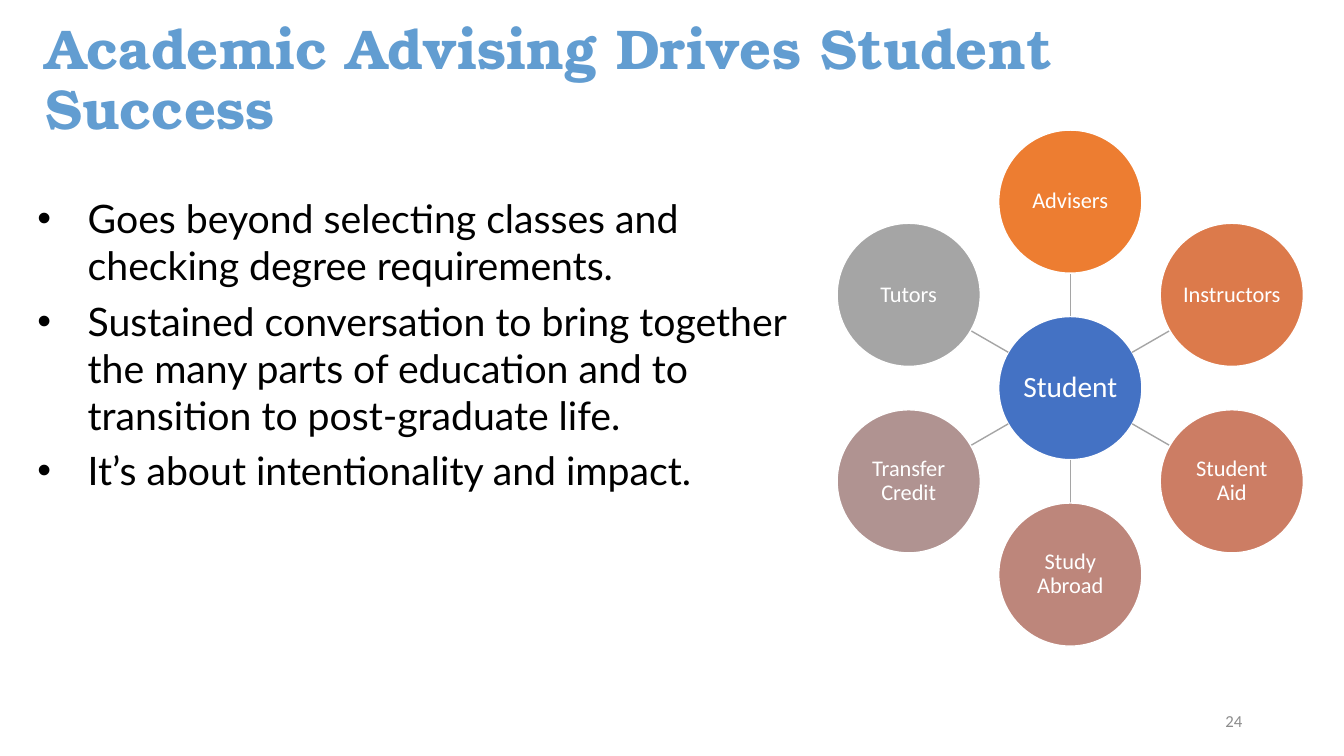
import math
from dataclasses import dataclass

import lxml.etree
import pptx
import pptx.dml.color
import pptx.enum.shapes
import pptx.enum.text
import pptx.oxml.ns
import pptx.util

ALIGN = pptx.enum.text.PP_ALIGN
ANCHOR = pptx.enum.text.MSO_ANCHOR
FIT = pptx.enum.text.MSO_AUTO_SIZE


@dataclass(frozen=True)
class Theme:
    title: str = "629DD1"
    body: str = "000000"
    white: str = "FFFFFF"
    hub: str = "4472C4"
    spoke: str = "A5A5A5"
    number: str = "8C8C8C"
    serif: str = "TeX Gyre Bonum"
    sans: str = "Lato"
    label: str = "Calibri"
    title_pt: int = 40
    body_pt: int = 28
    hub_pt: int = 21
    node_pt: int = 16
    number_pt: int = 12


THEME = Theme()
NODES = [
    ("Advisers", "ED7D31"),
    ("Instructors", "DC7A4B"),
    ("Student Aid", "CC7D64"),
    ("Study Abroad", "BD867B"),
    ("Transfer Credit", "B09391"),
    ("Tutors", "A5A5A5"),
]
POINTS = [
    "Goes beyond selecting classes and checking degree requirements.",
    "Sustained conversation to bring together the many parts of education and to transition to post-graduate life.",
    "It’s about intentionality and impact.",
]


def px(size):
    return pptx.util.Emu(round(size * 9144))


def tint(color):
    return pptx.dml.color.RGBColor.from_string(color)


def place(shape, box):
    shape.left, shape.top, shape.width, shape.height = map(px, box)


def write(shape, text, *, font, size, color, bold=False, align=ALIGN.LEFT,
          anchor=ANCHOR.MIDDLE, lead=1.0, before=0, inset=(10, 5), fit=FIT.NONE):
    frame = shape.text_frame
    frame.text = text
    frame.word_wrap = True
    frame.auto_size = fit
    frame.vertical_anchor = anchor
    frame.margin_left = frame.margin_right = px(inset[0])
    frame.margin_top = frame.margin_bottom = px(inset[1])
    for para in frame.paragraphs:
        para.alignment = align
        para.line_spacing = lead
        para.space_before = pptx.util.Pt(before)
        for run in para.runs:
            run.font.name = font
            run.font.size = pptx.util.Pt(size)
            run.font.bold = bold
            run.font.color.rgb = tint(color)


def add_title(slide, box):
    title = slide.shapes.title
    place(title, box)
    write(title, "Academic Advising Drives Student Success", font=THEME.serif,
          size=THEME.title_pt, color=THEME.title, bold=True, lead=0.9)


def add_list(slide, box):
    body = slide.placeholders[1]
    place(body, box)
    write(body, "\n".join(POINTS), font=THEME.sans, size=THEME.body_pt,
          color=THEME.body, anchor=ANCHOR.TOP, before=6, fit=FIT.SHAPE_TO_FIT_TEXT)
    for para in body.text_frame.paragraphs:
        props = para._p.get_or_add_pPr()
        props.set("marL", str(px(50)))
        props.set("indent", str(px(-50)))
        font = lxml.etree.SubElement(props, pptx.oxml.ns.qn("a:buFont"))
        font.set("typeface", "Arial")
        mark = lxml.etree.SubElement(props, pptx.oxml.ns.qn("a:buChar"))
        mark.set("char", "•")


def add_disc(slide, x, y, radius, text, fill, size):
    disc = slide.shapes.add_shape(
        pptx.enum.shapes.MSO_SHAPE.OVAL,
        *map(px, (x - radius, y - radius, 2 * radius, 2 * radius)))
    disc.shadow.inherit = False
    disc.fill.solid()
    disc.fill.fore_color.rgb = tint(fill)
    disc.line.color.rgb = tint(THEME.white)
    disc.line.width = pptx.util.Pt(1)
    write(disc, text, font=THEME.label, size=size, color=THEME.white,
          align=ALIGN.CENTER, lead=0.9, inset=(1, 1))


def add_spoke(slide, start, end):
    spoke = slide.shapes.add_connector(
        pptx.enum.shapes.MSO_CONNECTOR.STRAIGHT, *map(px, start + end))
    spoke.line.color.rgb = tint(THEME.spoke)
    spoke.line.width = pptx.util.Pt(1)
    lxml.etree.SubElement(spoke._element.spPr, pptx.oxml.ns.qn("a:effectLst"))


def add_wheel(slide, box):
    left, top, width, height = box
    x, y = left + width / 2, top + height / 2
    radius = 71
    orbit = height / 2 - radius
    add_disc(slide, x, y, radius, "Student", THEME.hub, THEME.hub_pt)
    for index, (text, fill) in enumerate(NODES):
        angle = math.tau * index / len(NODES)

        def point(reach):
            return x + reach * math.sin(angle), y - reach * math.cos(angle)

        add_spoke(slide, point(radius), point(orbit - radius))
        add_disc(slide, *point(orbit), radius, text, fill, THEME.node_pt)


def add_number(slide, box):
    number = slide.shapes.add_textbox(*map(px, box))
    write(number, "24", font=THEME.label, size=THEME.number_pt,
          color=THEME.number, align=ALIGN.RIGHT)


def main():
    deck = pptx.Presentation()
    deck.slide_width, deck.slide_height = px(1333), px(750)
    slide = deck.slides.add_slide(deck.slide_layouts[1])
    add_title(slide, (35, 18, 1258, 125))
    add_list(slide, (27, 188, 792, 350))
    add_wheel(slide, (830, 129, 463, 512))
    add_number(slide, (942, 695, 300, 40))
    deck.save("out.pptx")


if __name__ == "__main__":
    main()
